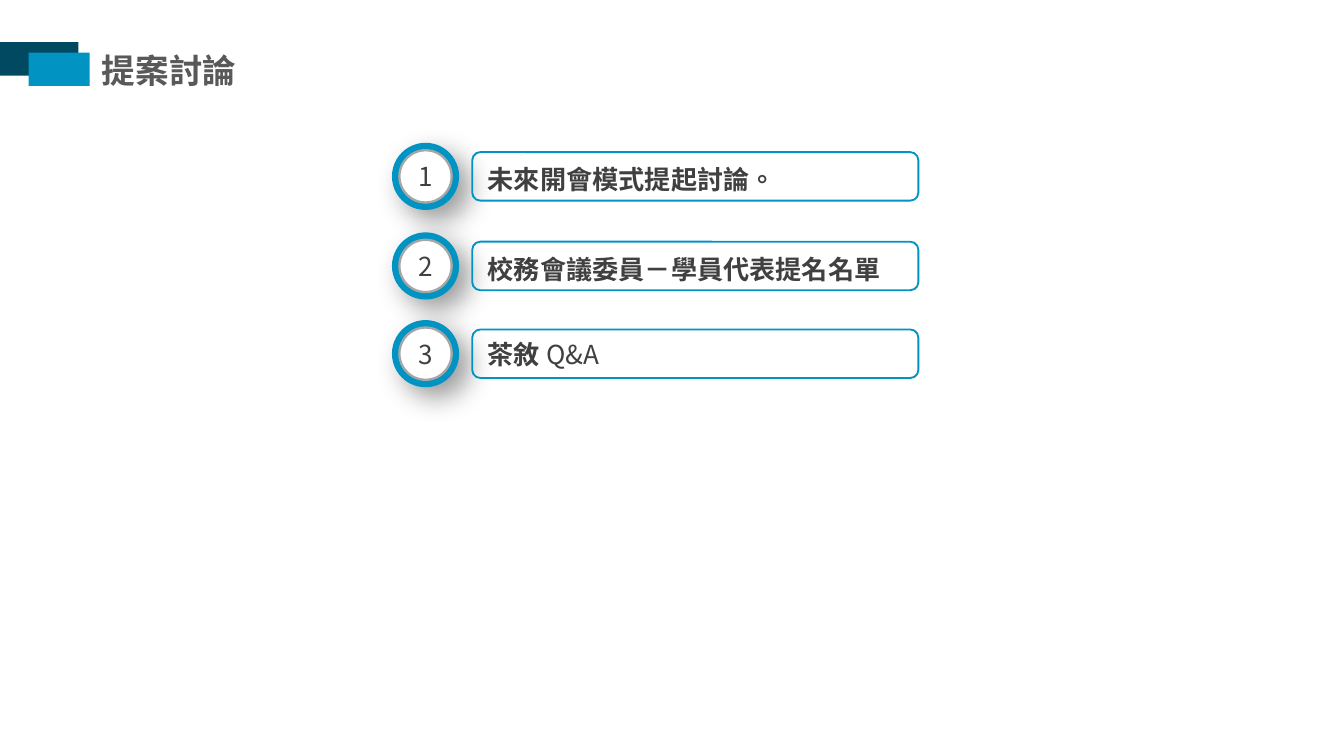
from lxml import etree
from pptx import Presentation
from pptx.dml.color import RGBColor
from pptx.enum.shapes import MSO_SHAPE
from pptx.enum.text import MSO_ANCHOR, PP_ALIGN
from pptx.oxml.ns import qn
from pptx.util import Pt

RECT, OVAL = MSO_SHAPE.RECTANGLE, MSO_SHAPE.OVAL
ROUNDED = MSO_SHAPE.ROUNDED_RECTANGLE
MIDDLE, LEFT, CENTER = MSO_ANCHOR.MIDDLE, PP_ALIGN.LEFT, PP_ALIGN.CENTER

NAVY = RGBColor(0x00, 0x49, 0x61)
BLUE = RGBColor(0x01, 0x93, 0xC2)
WHITE = RGBColor(0xFF, 0xFF, 0xFF)
RING = RGBColor(0xA6, 0xA6, 0xA6)
TITLE_GREY = RGBColor(0x59, 0x59, 0x59)
TEXT_GREY = RGBColor(0x40, 0x40, 0x40)

TITLE_FONT, BODY_FONT = "Calibri", "Noto Sans CJK SC"

# Top of each row, line spacing, and its (text, bold) runs
AGENDA = [
    (76.5, 1.2, [("未來開會模式提起討論。", True)]),
    (124.5, 1.2, [("校務會議委員－學員代表提名名單", True)]),
    (171.5, 1.0, [("茶敘", True), (" Q&A", False)]),
]


def add_shape(shapes, kind, x, y, w, h, fill=None, line=None, width=1):
    s = shapes.add_shape(kind, Pt(x), Pt(y), Pt(w), Pt(h))
    s.shadow.inherit = False
    if fill is None:
        s.fill.background()
    else:
        s.fill.solid()
        s.fill.fore_color.rgb = fill
    if line is None:
        s.line.fill.background()
    else:
        s.line.color.rgb = line
        s.line.width = Pt(width)
    return s


def add_run(p, text, size, color, bold=False, font=BODY_FONT):
    r = p.add_run()
    r.text = text
    r.font.name = font
    r.font.size = Pt(size)
    r.font.bold = bold
    r.font.color.rgb = color
    rPr = r.font._element
    rPr.set("lang", "zh-TW")
    ea = etree.Element(qn("a:ea"), typeface=BODY_FONT)
    rPr.find(qn("a:latin")).addnext(ea)


def add_drop_shadow(s):
    effects = s._element.spPr.find(qn("a:effectLst"))
    shadow = etree.SubElement(effects, qn("a:outerShdw"), blurRad=str(Pt(15)),
                              dist=str(Pt(8)), dir=str(45 * 60000),
                              algn="tl", rotWithShape="0")
    color = etree.SubElement(shadow, qn("a:srgbClr"), val="000000")
    etree.SubElement(color, qn("a:alpha"), val="40000")


def add_header(slide, x, y, title):
    tb = slide.shapes.add_textbox(Pt(x + 47.5), Pt(y + 0.5), Pt(87), Pt(29))
    tf = tb.text_frame
    tf.word_wrap = False
    add_run(tf.paragraphs[0], title, 18, TITLE_GREY, True, TITLE_FONT)
    add_shape(slide.shapes, RECT, x, y, 42, 18, NAVY)
    add_shape(slide.shapes, RECT, x + 15.3, y + 5.7, 32.7, 17.8, BLUE)


def add_agenda_row(slide, x, y, w, h, number, runs, spacing):
    """Numbered badge as high as the row, with an outlined text box beside it."""
    shapes = slide.shapes.add_group_shape().shapes
    badge = add_shape(shapes, OVAL, x, y, h, h, BLUE)
    add_drop_shadow(badge)

    inset = 4
    disc = add_shape(shapes, OVAL, x + inset, y + inset, h - 2 * inset,
                     h - 2 * inset, WHITE, RING, 1.25)
    tf = disc.text_frame
    tf.margin_left = tf.margin_right = 0
    tf.vertical_anchor = MIDDLE
    p = tf.paragraphs[0]
    p.alignment = CENTER
    add_run(p, str(number), 14, TEXT_GREY)

    gap, box_h = 7, 26
    box = add_shape(shapes, ROUNDED, x + h + gap, y + (h - box_h) / 2,
                    w - h - gap, box_h, line=BLUE)
    tf = box.text_frame
    tf.vertical_anchor = MIDDLE
    p = tf.paragraphs[0]
    p.alignment = LEFT
    p.line_spacing = spacing
    for text, bold in runs:
        add_run(p, text, 14, TEXT_GREY, bold)


def main():
    prs = Presentation()
    prs.slide_width, prs.slide_height = Pt(720), Pt(405)
    slide = prs.slides.add_slide(prs.slide_layouts[6])
    add_header(slide, 0, 22.5, "提案討論")
    for number, (top, spacing, runs) in enumerate(AGENDA, 1):
        add_agenda_row(slide, 210, top, 282, 36, number, runs, spacing)
    prs.save("out.pptx")


if __name__ == "__main__":
    main()
